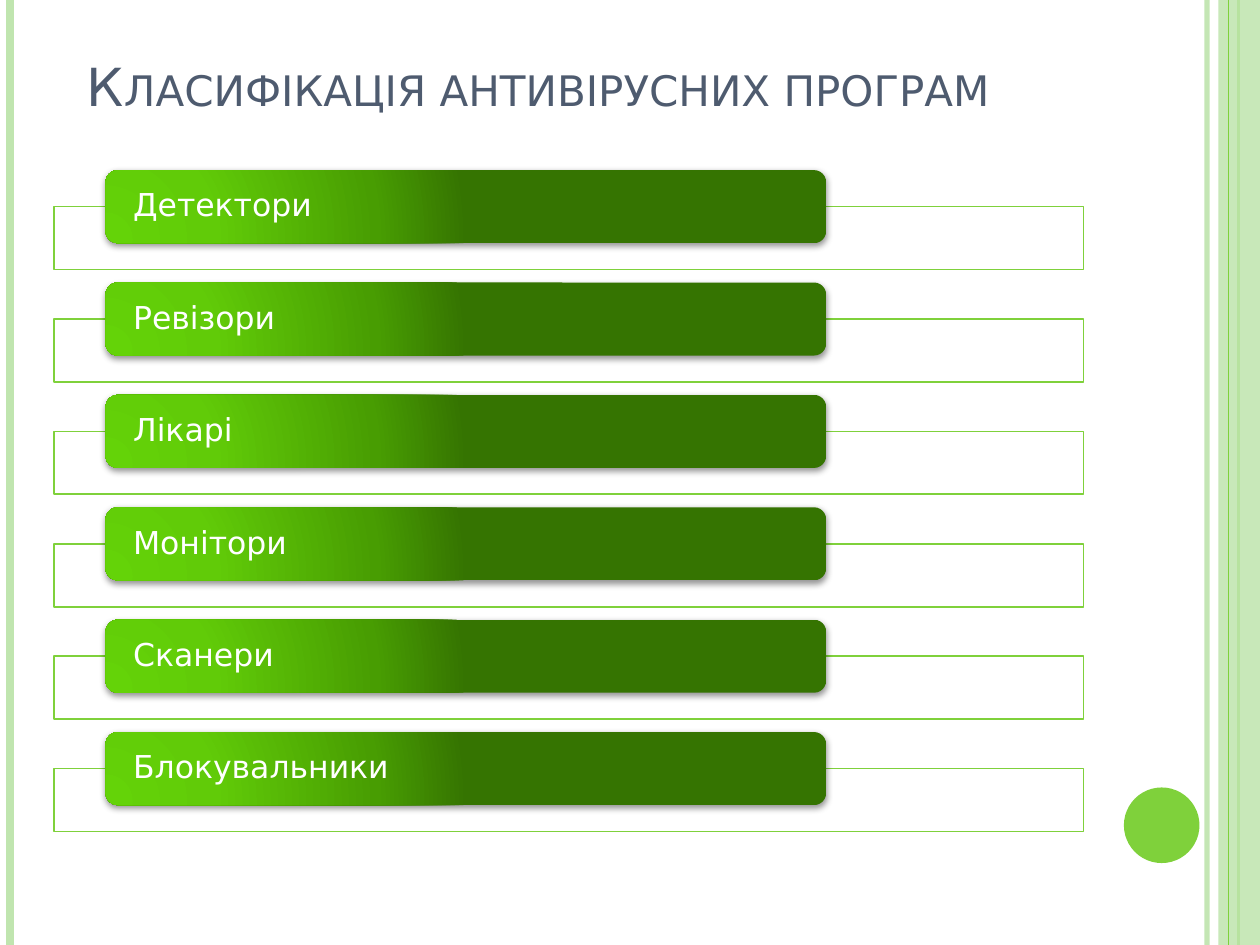
from lxml import etree
from pptx import Presentation
from pptx.dml.color import RGBColor
from pptx.enum.shapes import MSO_CONNECTOR, MSO_SHAPE
from pptx.enum.text import MSO_ANCHOR, PP_ALIGN
from pptx.oxml import parse_xml
from pptx.oxml.ns import nsdecls, qn
from pptx.util import Inches, Pt

WIDTH, HEIGHT = 10, 7.5
FONT = "DejaVu Sans"
GREEN = RGBColor(0x7F, 0xD1, 0x3B)
PALE = RGBColor(0xC0, 0xE5, 0xAF)
SLATE = RGBColor(0x4E, 0x5B, 0x6F)
WHITE = RGBColor(0xFF, 0xFF, 0xFF)
BAR_STOPS = [(0, RGBColor(0x64, 0xD3, 0x08)), (30, RGBColor(0x61, 0xCB, 0x08)),
             (75, RGBColor(0x48, 0x9D, 0x02)), (100, RGBColor(0x35, 0x74, 0x01))]

TITLE = "Класифікація антивірусних програм"
PROGRAMS = ["Детектори", "Ревізори", "Лікарі", "Монітори", "Сканери", "Блокувальники"]


def set_alpha(holder, percent):
    """Make the solid colour inside a fill or line element translucent."""
    color = next(holder.iter(qn("a:srgbClr")))
    etree.SubElement(color, qn("a:alpha")).set("val", str(percent * 1000))


def add_shape(slide, kind, box, fill=None, alpha=None, line=None):
    s = slide.shapes.add_shape(kind, *map(Inches, box))
    s.shadow.inherit = False
    if fill is not None:
        s.fill.solid()
        s.fill.fore_color.rgb = fill
    if alpha is not None:
        set_alpha(s._element.spPr.find(qn("a:solidFill")), alpha)
    if line is None:
        s.line.fill.background()
    else:
        s.line.color.rgb = line
        s.line.width = Pt(1)
    return s


def add_stripe(slide, x, color, width, alpha=None):
    c = slide.shapes.add_connector(MSO_CONNECTOR.STRAIGHT, Inches(x), 0,
                                   Inches(x), Inches(HEIGHT))
    c.line.color.rgb = color
    c.line.width = Pt(width)
    if alpha is not None:
        set_alpha(c.line._ln, alpha)
    etree.SubElement(c._element.spPr, qn("a:effectLst"))


def style_bar(s):
    """Give a bar its radial gradient and soft shadow."""
    stops = "".join(f'<a:gs pos="{pos * 1000}"><a:srgbClr val="{color}"/></a:gs>'
                    for pos, color in BAR_STOPS)
    gradient = parse_xml(
        f'<a:gradFill {nsdecls("a")} rotWithShape="1"><a:gsLst>{stops}</a:gsLst>'
        '<a:path path="circle">'
        '<a:fillToRect l="5000" t="100000" r="120000" b="10000"/>'
        '</a:path></a:gradFill>')
    shadow = parse_xml(
        f'<a:outerShdw {nsdecls("a")} blurRad="{Pt(4)}" dist="{Pt(1.6)}" '
        'dir="5400000" rotWithShape="0"><a:srgbClr val="000000">'
        '<a:alpha val="42000"/></a:srgbClr></a:outerShdw>')
    spPr = s._element.spPr
    spPr.find(qn("a:prstGeom")).addnext(gradient)
    spPr.find(qn("a:effectLst")).append(shadow)


def add_decor(slide):
    """Stripes along both edges and the disc at lower right."""
    add_stripe(slide, 9.58, PALE, 3, 93)
    add_stripe(slide, 0.08, PALE, 4.5)
    add_stripe(slide, 9.83, GREEN, 1.5)
    add_shape(slide, MSO_SHAPE.RECTANGLE, (9.67, 0, 0.33, HEIGHT), PALE, 87)
    add_stripe(slide, 9.75, GREEN, 0.75)
    add_shape(slide, MSO_SHAPE.OVAL, (8.92, 6.25, 0.6, 0.6), GREEN)


def add_title(slide, box, text):
    tf = slide.shapes.add_textbox(*map(Inches, box)).text_frame
    tf.word_wrap = True
    tf.vertical_anchor = MSO_ANCHOR.BOTTOM
    p = tf.paragraphs[0]
    r = p.add_run()
    r.text = text
    r.font.size, r.font.name = Pt(30), FONT
    r.font.color.rgb = SLATE
    r.font._element.set("cap", "small")


def add_bar_list(slide, box, labels):
    """Evenly spaced rows: a wide frame with a labelled bar over its top edge."""
    left, top, width, height = box
    row_h, frame_h, bar_h = 0.79, 0.5, 0.58
    pitch = (height - row_h) / (len(labels) - 1)
    for i, label in enumerate(labels):
        y = top + i * pitch
        add_shape(slide, MSO_SHAPE.RECTANGLE,
                  (left, y + row_h - frame_h, width, frame_h), WHITE, 90, GREEN)
        bar = add_shape(slide, MSO_SHAPE.ROUNDED_RECTANGLE,
                        (left + 0.05 * width, y, 0.7 * width, bar_h))
        style_bar(bar)
        tf = bar.text_frame
        tf.word_wrap = True
        tf.vertical_anchor = MSO_ANCHOR.MIDDLE
        # The rounded corners add a little to the side margins
        tf.margin_left = tf.margin_right = Inches(0.19)
        tf.margin_top = tf.margin_bottom = 0
        p = tf.paragraphs[0]
        p.text = label
        p.alignment = PP_ALIGN.LEFT
        p.line_spacing = 0.9
        p.font.size, p.font.name = Pt(18), FONT
        p.font.color.rgb = WHITE


def main():
    prs = Presentation()
    prs.slide_width, prs.slide_height = Inches(WIDTH), Inches(HEIGHT)
    slide = prs.slides.add_slide(prs.slide_layouts[6])
    add_decor(slide)
    add_title(slide, (0.59, -0.27, 8.17, 1.25), TITLE)
    add_bar_list(slide, (0.43, 1.35, 8.17, 5.25), PROGRAMS)
    prs.save("out.pptx")


if __name__ == "__main__":
    main()
